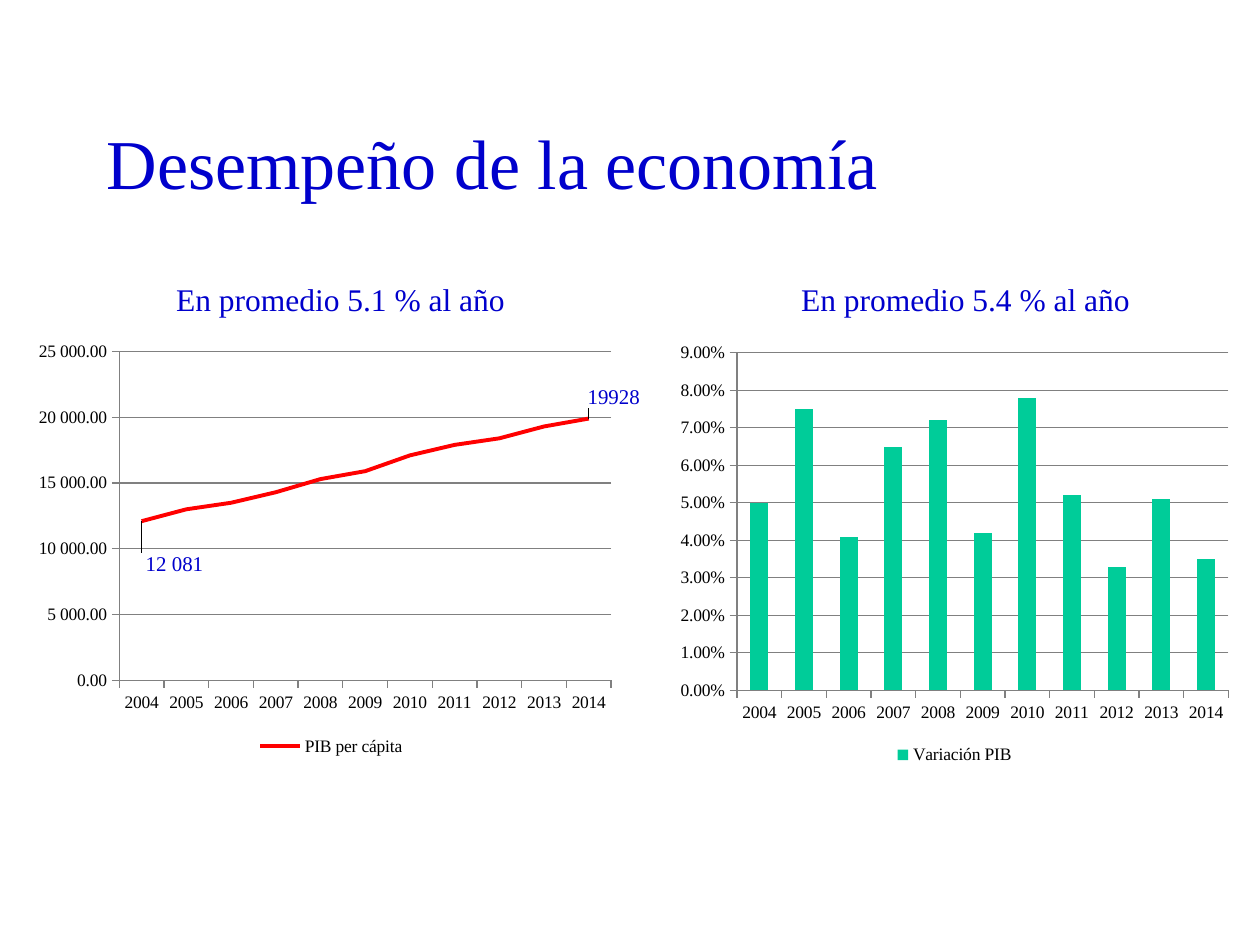
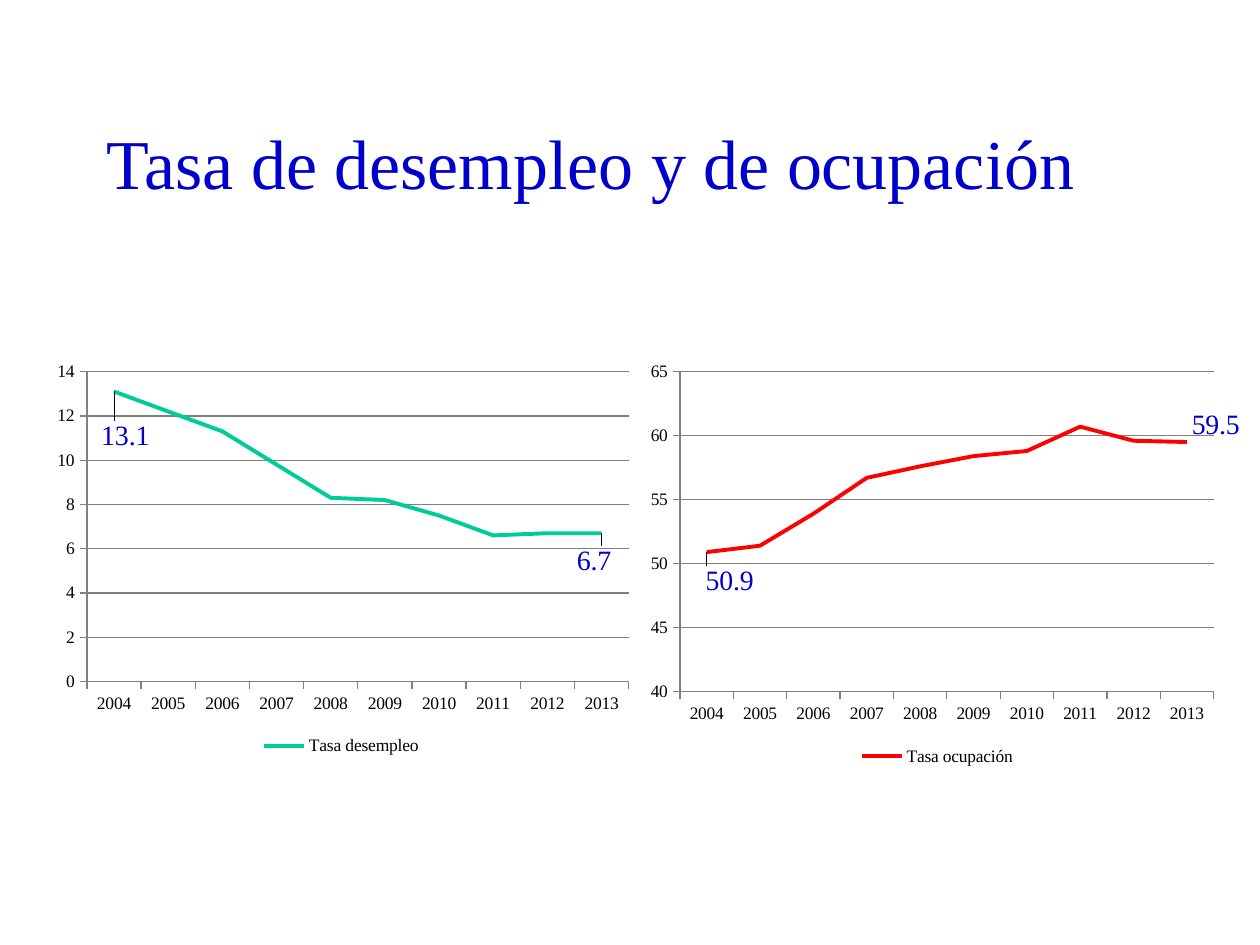
import dataclasses
import typing

import lxml.etree
import pptx
import pptx.chart.chart
import pptx.chart.data
import pptx.dml.color
import pptx.enum.chart
import pptx.enum.text
import pptx.oxml
import pptx.oxml.ns
import pptx.slide
import pptx.util

Inches = pptx.util.Inches
Pt = pptx.util.Pt
qn = pptx.oxml.ns.qn
ChartType = pptx.enum.chart.XL_CHART_TYPE
Area = tuple[float, float, float, float]  # left, top, width, height in inches

FONT = "Times New Roman"
COLORS = {
    "title": "0000CC",
    "text": "000000",
    "axis": "808080",
    "red": "FF0000",
    "green": "00CC99",
}
C15 = "http://schemas.microsoft.com/office/drawing/2012/chart"


@dataclasses.dataclass
class PointLabel:
    """Label of one point, moved by a share of the chart's size."""
    index: int
    shift_x: float
    shift_y: float
    text: str = ""


@dataclasses.dataclass
class ChartPanel:
    name: str
    values: list[float]
    color: str
    place: Area
    plot_place: Area
    scale: tuple[float, float, float]  # minimum, maximum, step
    number_format: str = "General"
    kind: ChartType = ChartType.LINE
    label_size: int = 16
    labels: list[PointLabel] = dataclasses.field(default_factory=list)


@dataclasses.dataclass
class Caption:
    text: str
    place: Area


@dataclasses.dataclass
class PageContent:
    title: str
    panels: list[ChartPanel]
    captions: list[Caption] = dataclasses.field(default_factory=list)


PAGES = [
    PageContent(
        "Desempeño de la economía",
        [
            ChartPanel(
                "PIB per cápita",
                [12100, 13000, 13500, 14300, 15300, 15900, 17100, 17900, 18400, 19300, 19900],
                "red", (0.2, 2.65, 4.88, 3.39), (0.95, 2.79, 3.92, 2.61), (0, 25000, 5000),
                number_format=r"#\ ###\ ##0.00", label_size=12,
                labels=[PointLabel(0, -0.01, 0.1, " 12 081"), PointLabel(10, -0.01, -0.05, "19928")],
            ),
            ChartPanel(
                "Variación PIB",
                [0.05, 0.075, 0.041, 0.065, 0.072, 0.042, 0.078, 0.052, 0.033, 0.051, 0.035],
                "green", (5.31, 2.65, 4.53, 3.46), (5.85, 2.8, 3.9, 2.68), (0, 0.09, 0.01),
                number_format="0.00%", kind=ChartType.COLUMN_CLUSTERED,
            ),
        ],
        [
            Caption("En promedio 5.4 % al año", (6.26, 2.17, 2.99, 0.4)),
            Caption("En promedio 5.1 % al año", (1.3, 2.17, 3.86, 0.4)),
        ],
    ),
    PageContent(
        "Tasa de desempleo y de ocupación",
        [
            ChartPanel(
                "Tasa desempleo", [13.1, 12.2, 11.3, 9.8, 8.3, 8.2, 7.5, 6.6, 6.7, 6.7],
                "green", (0.35, 2.81, 4.72, 3.23), (0.69, 2.95, 4.3, 2.46), (0, 14, 2),
                labels=[PointLabel(0, -0.03, 0.11), PointLabel(9, -0.05, 0.07)],
            ),
            ChartPanel(
                "Tasa ocupación", [50.9, 51.4, 53.9, 56.7, 57.6, 58.4, 58.8, 60.7, 59.6, 59.5],
                "red", (5.08, 2.81, 4.76, 3.31), (5.4, 2.95, 4.27, 2.54), (40, 65, 5),
                labels=[PointLabel(0, -0.01, 0.07), PointLabel(9, 0, -0.04)],
            ),
        ],
    ),
]


def rgb(name: str) -> pptx.dml.color.RGBColor:
    return pptx.dml.color.RGBColor.from_string(COLORS[name])


def style_font(font: typing.Any, size: float, color: str) -> None:
    font.name, font.size = FONT, Pt(size)
    font.bold = False
    font.color.rgb = rgb(color)


def add_text(page: pptx.slide.Slide, text: str, *, place: Area, size: float,
             anchor: pptx.enum.text.MSO_ANCHOR = pptx.enum.text.MSO_ANCHOR.TOP) -> None:
    box = page.shapes.add_textbox(*map(Inches, place))
    frame = box.text_frame
    frame.word_wrap = True
    frame.vertical_anchor = anchor
    span = frame.paragraphs[0].add_run()
    span.text = text
    style_font(span.font, size, "title")


def make_layout(**settings: typing.Any) -> lxml.etree.ElementBase:
    layout = pptx.oxml.parse_xml(f'<c:layout {pptx.oxml.ns.nsdecls("c")}><c:manualLayout/></c:layout>')
    for tag, value in settings.items():
        lxml.etree.SubElement(layout[0], qn(f"c:{tag}")).set("val", str(value))
    return layout


def place_plot(chart: pptx.chart.chart.Chart, panel: ChartPanel) -> None:
    plot_area = chart._chartSpace.chart.plotArea
    for layout in plot_area.findall(qn("c:layout")):
        plot_area.remove(layout)
    left, top, width, height = panel.place
    plot_left, plot_top, plot_width, plot_height = panel.plot_place
    plot_area.insert(0, make_layout(
        layoutTarget="inner", xMode="edge", yMode="edge",
        x=(plot_left - left) / width, y=(plot_top - top) / height,
        w=plot_width / width, h=plot_height / height))


def style_axes(chart: pptx.chart.chart.Chart, panel: ChartPanel) -> None:
    value_axis = chart.value_axis
    value_axis.minimum_scale, value_axis.maximum_scale, value_axis.major_unit = panel.scale
    value_axis.has_major_gridlines = True
    value_axis.tick_labels.number_format = panel.number_format
    value_axis.tick_labels.number_format_is_linked = False
    for axis in (chart.category_axis, value_axis):
        axis.major_tick_mark = pptx.enum.chart.XL_TICK_MARK.OUTSIDE
        axis.minor_tick_mark = pptx.enum.chart.XL_TICK_MARK.NONE
    for line in (chart.category_axis.format.line, value_axis.format.line,
                 value_axis.major_gridlines.format.line):
        line.color.rgb = rgb("axis")
        line.width = Pt(0.75)


def label_points(series: typing.Any, panel: ChartPanel) -> None:
    for label in panel.labels:
        data_label = series.points[label.index].data_label
        if label.text:
            span = data_label.text_frame.paragraphs[0].add_run()
            span.text = label.text
            style_font(span.font, panel.label_size, "title")
        else:
            style_font(data_label.font, panel.label_size, "title")
        data_label.position = pptx.enum.chart.XL_LABEL_POSITION.RIGHT
    series.data_labels.show_value = False

    # Shifted places and leader lines
    group = series._element.find(qn("c:dLbls"))
    for element, label in zip(group.findall(qn("c:dLbl")), panel.labels):
        element.find(qn("c:idx")).addnext(make_layout(x=label.shift_x, y=label.shift_y))
    group.append(pptx.oxml.parse_xml(
        f'<c:extLst {pptx.oxml.ns.nsdecls("c")}>'
        f'<c:ext uri="{{CE6537A1-D6FC-4f65-9D91-7224C49458BB}}" xmlns:c15="{C15}">'
        '<c15:showLeaderLines val="1"/></c:ext></c:extLst>'))


def add_panel(page: pptx.slide.Slide, panel: ChartPanel) -> None:
    data = pptx.chart.data.CategoryChartData()
    data.categories = [str(2004 + step) for step in range(len(panel.values))]
    data.add_series(panel.name, panel.values)
    chart = page.shapes.add_chart(panel.kind, *map(Inches, panel.place), data).chart
    chart.has_title = False
    style_font(chart.font, 10, "text")
    chart.has_legend = True
    chart.legend.position = pptx.enum.chart.XL_LEGEND_POSITION.BOTTOM
    chart.legend.include_in_layout = False
    place_plot(chart, panel)
    style_axes(chart, panel)

    # Series
    plot = chart.plots[0]
    plot.vary_by_categories = False
    series = plot.series[0]
    if panel.kind == ChartType.COLUMN_CLUSTERED:
        plot.gap_width = 150
        series.format.fill.solid()
        series.format.fill.fore_color.rgb = rgb(panel.color)
    else:
        series.smooth = False
        series.marker.style = pptx.enum.chart.XL_MARKER_STYLE.NONE
        series.format.line.color.rgb = rgb(panel.color)
        series.format.line.width = Pt(2.25)
    if panel.labels:
        label_points(series, panel)


def main() -> None:
    deck = pptx.Presentation()
    deck.slide_width, deck.slide_height = Inches(10), Inches(7.5)
    for content in PAGES:
        page = deck.slides.add_slide(deck.slide_layouts[6])
        add_text(page, content.title, place=(0.75, 0.66, 8.5, 1.25), size=40,
                 anchor=pptx.enum.text.MSO_ANCHOR.MIDDLE)
        for panel in content.panels:
            add_panel(page, panel)
        for caption in content.captions:
            add_text(page, caption.text, place=caption.place, size=18)
    deck.save("out.pptx")


if __name__ == "__main__":
    main()
